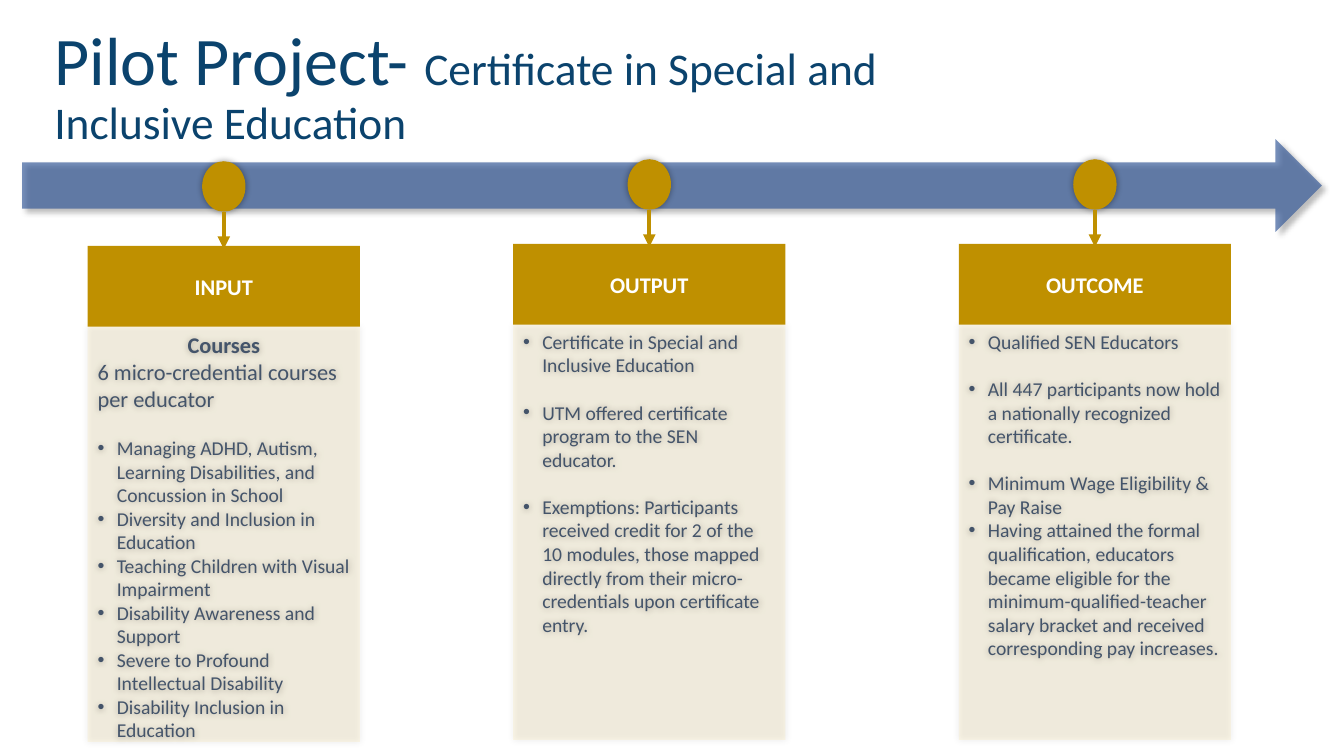
from dataclasses import dataclass

from lxml import etree
from pptx import Presentation
from pptx import util as u
from pptx.dml import color
from pptx.enum import shapes, text
from pptx.oxml import ns

COLORS = {
    "title": "0B436D",
    "arrow": "2F5597",
    "gold": "BF9000",
    "cream": "FFE699",
    "body": "44546A",
    "white": "FFFFFF",
    "shadow": "000000",
}
FONT = "Calibri"
COLUMN_WIDTH = 2.7
HEADER_HEIGHT = 0.8
DOT_WIDTH, DOT_HEIGHT = 0.43, 0.5
DOT_RISE = 0.84
INDENT = 0.19


@dataclass(frozen=True)
class Entry:
    wording: str
    size: int = 14
    bold: bool = False
    bullet: bool = True
    centered: bool = False
    space_before: int = 0


@dataclass(frozen=True)
class Stage:
    name: str
    left: float
    top: float
    entries: tuple[Entry, ...]


GAP = 17
STAGES = (
    Stage("INPUT", 0.87, 2.44, (
        Entry("Courses", 16, bold=True, bullet=False, centered=True),
        Entry("6 micro-credential courses per educator", 16, bullet=False),
        Entry("Managing ADHD, Autism, Learning Disabilities, and Concussion in School", space_before=GAP),
        Entry("Diversity and Inclusion in Education"),
        Entry("Teaching Children with Visual Impairment"),
        Entry("Disability Awareness and Support"),
        Entry("Severe to Profound Intellectual Disability"),
        Entry("Disability Inclusion in Education"),
    )),
    Stage("OUTPUT", 5.09, 2.42, (
        Entry("Certificate in Special and Inclusive Education"),
        Entry("UTM offered certificate program to the SEN educator.", space_before=GAP),
        Entry("Exemptions: Participants received credit for 2 of the 10 modules, those mapped "
              "directly from their micro-credentials upon certificate entry.", space_before=GAP),
    )),
    Stage("OUTCOME", 9.51, 2.42, (
        Entry("Qualified SEN Educators"),
        Entry("All 447 participants now hold a nationally recognized certificate.", space_before=GAP),
        Entry("Minimum Wage Eligibility & Pay Raise", space_before=GAP),
        Entry("Having attained the formal qualification, educators became eligible for the "
              "minimum-qualified-teacher salary bracket and received corresponding pay increases."),
    )),
)


def rgb(name: str) -> color.RGBColor:
    return color.RGBColor.from_string(COLORS[name])


def set_font(font, size: float, color_name: str, bold: bool = False) -> None:
    font.name = FONT
    font.size = u.Pt(size)
    font.bold = bold
    font.color.rgb = rgb(color_name)


def add_block(parent, kind, left: float, top: float, width: float, height: float,
              color_name: str, opacity: int = 100):
    shape = parent.add_shape(kind, u.Inches(left), u.Inches(top), u.Inches(width), u.Inches(height))
    shape.shadow.inherit = False
    shape.line.fill.background()
    shape.fill.solid()
    shape.fill.fore_color.rgb = rgb(color_name)
    if opacity < 100:
        fill_color = shape.fill._xPr.find(".//" + ns.qn("a:srgbClr"))
        etree.SubElement(fill_color, ns.qn("a:alpha"), val=str(opacity * 1000))
    return shape


def add_shadow(shape, blur: int, distance: int = 0, angle: int = 0) -> None:
    effects = shape._element.spPr.find(ns.qn("a:effectLst"))
    shadow = etree.SubElement(
        effects, ns.qn("a:outerShdw"), blurRad=str(u.Pt(blur)), dist=str(u.Pt(distance)),
        dir=str(angle * 60000), algn="ctr", rotWithShape="0")
    shade = etree.SubElement(shadow, ns.qn("a:srgbClr"), val=COLORS["shadow"])
    etree.SubElement(shade, ns.qn("a:alpha"), val="40000")


def add_down_arrow(parent, x: float, top: float, bottom: float) -> None:
    connector = parent.add_connector(
        shapes.MSO_CONNECTOR.STRAIGHT, u.Inches(x), u.Inches(top), u.Inches(x), u.Inches(bottom))
    connector.line.color.rgb = rgb("gold")
    connector.line.width = u.Pt(3)
    etree.SubElement(connector.line._get_or_add_ln(), ns.qn("a:tailEnd"), type="triangle")
    etree.SubElement(connector._element.spPr, ns.qn("a:effectLst"))


def write_entries(frame, entries: tuple[Entry, ...]) -> None:
    frame.word_wrap = True
    frame.vertical_anchor = text.MSO_ANCHOR.TOP
    for index, entry in enumerate(entries):
        paragraph = frame.add_paragraph() if index else frame.paragraphs[0]
        paragraph.text = entry.wording
        paragraph.alignment = text.PP_ALIGN.CENTER if entry.centered else text.PP_ALIGN.LEFT
        if entry.space_before:
            paragraph.space_before = u.Pt(entry.space_before)
        if entry.bullet:
            properties = paragraph._p.get_or_add_pPr()
            properties.set("marL", str(u.Inches(INDENT)))
            properties.set("indent", str(-u.Inches(INDENT)))
            etree.SubElement(properties, ns.qn("a:buFont"), typeface="Arial")
            etree.SubElement(properties, ns.qn("a:buChar"), char="•")
        set_font(paragraph.font, entry.size, "body", entry.bold)


def add_stage(slide, stage: Stage) -> None:
    group = slide.shapes.add_group_shape().shapes
    center = stage.left + COLUMN_WIDTH / 2
    dot_top = stage.top - DOT_RISE
    dot = add_block(group, shapes.MSO_SHAPE.OVAL, center - DOT_WIDTH / 2, dot_top,
                    DOT_WIDTH, DOT_HEIGHT, "gold")
    add_shadow(dot, 5)
    add_down_arrow(group, center, dot_top + DOT_HEIGHT, stage.top + 0.03)
    panel = add_block(group, shapes.MSO_SHAPE.RECTANGLE, stage.left, stage.top + HEADER_HEIGHT,
                      COLUMN_WIDTH, 4.12, "cream", 19)
    add_shadow(panel, 5)
    write_entries(panel.text_frame, stage.entries)
    header = add_block(group, shapes.MSO_SHAPE.RECTANGLE, stage.left, stage.top,
                       COLUMN_WIDTH, HEADER_HEIGHT, "gold")
    header.text_frame.vertical_anchor = text.MSO_ANCHOR.MIDDLE
    paragraph = header.text_frame.paragraphs[0]
    paragraph.text = stage.name
    paragraph.alignment = text.PP_ALIGN.CENTER
    set_font(paragraph.font, 16, "white", bold=True)


def add_title(slide) -> None:
    box = slide.shapes.add_textbox(u.Inches(0.44), u.Inches(0.15), u.Inches(9.98), u.Inches(1.45))
    frame = box.text_frame
    frame.word_wrap = True
    frame.vertical_anchor = text.MSO_ANCHOR.MIDDLE
    paragraph = frame.paragraphs[0]
    paragraph.line_spacing = 0.9
    for wording, size in (("Pilot Project- ", 48.6),
                          ("Certificate in Special and Inclusive Education", 32.4)):
        run = paragraph.add_run()
        run.text = wording
        set_font(run.font, size, "title")


def main() -> None:
    presentation = Presentation()
    presentation.slide_width = u.Inches(13.33)
    presentation.slide_height = u.Inches(7.5)
    slide = presentation.slides.add_slide(presentation.slide_layouts[6])
    add_title(slide)
    timeline = add_block(slide.shapes, shapes.MSO_SHAPE.RIGHT_ARROW, 0.22, 1.38, 12.89, 0.92, "arrow", 65)
    add_shadow(timeline, 4, 3, 45)
    for stage in STAGES:
        add_stage(slide, stage)
    presentation.save("out.pptx")


if __name__ == "__main__":
    main()
